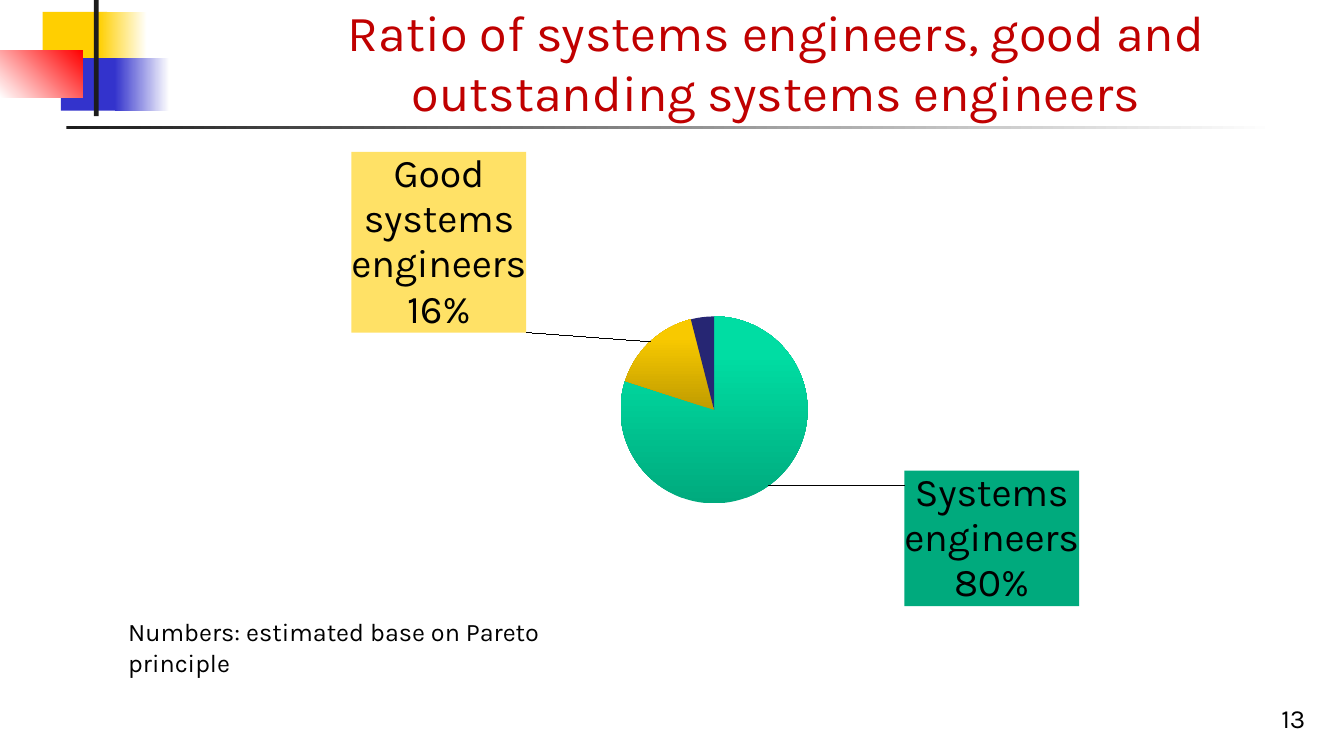
from copy import deepcopy

from pptx import Presentation
from pptx.chart.data import CategoryChartData
from pptx.dml.color import RGBColor
from pptx.enum.chart import XL_CHART_TYPE
from pptx.enum.shapes import MSO_SHAPE
from pptx.enum.text import MSO_ANCHOR, PP_ALIGN
from pptx.oxml import parse_xml
from pptx.oxml.ns import nsdecls
from pptx.util import Pt

RECTANGLE = MSO_SHAPE.RECTANGLE
PIE = XL_CHART_TYPE.PIE
TOP, BOTTOM = MSO_ANCHOR.TOP, MSO_ANCHOR.BOTTOM
LEFT, CENTER, RIGHT = PP_ALIGN.LEFT, PP_ALIGN.CENTER, PP_ALIGN.RIGHT

THEME = {
    "font": "Karla",
    "title": "C00000", "text": "000000", "white": "FFFFFF",
    "yellow": "FFCF01", "blue": "3333CC", "red": "FF0000", "ink": "1C1C1C",
    "outstanding": "262673", "green_label": "00AA7D", "yellow_label": "FFE166",
    "green_shades": [(0, "00AA7D"), (80, "00DDA3"), (100, "00DEA4")],
    "yellow_shades": [(0, "BF9B00"), (80, "F8C900"), (100, "F9CA00")],
    "title_size": 36, "label_size": 28, "note_size": 18, "number_size": 18.7,
}


def paint(fill, stops, angle=0):
    """Fill with one colour, or with a gradient through (percent, colour) stops."""
    if isinstance(stops, str):
        fill.solid()
        fill.fore_color.rgb = RGBColor.from_string(stops)
        return
    fill.gradient()
    fill.gradient_angle = angle
    first = fill.gradient_stops[0]._gs
    for _ in stops[2:]:
        first.addnext(deepcopy(first))
    for stop, (percent, color) in zip(fill.gradient_stops, stops):
        stop.position = percent / 100
        stop.color.rgb = RGBColor.from_string(color)


def set_font(font, size, color):
    values = {"name": THEME["font"], "size": Pt(size)}
    for key, value in values.items():
        setattr(font, key, value)
    font.color.rgb = RGBColor.from_string(color)


deck = Presentation()
deck.slide_width, deck.slide_height = Pt(960), Pt(540)
slide = deck.slides.add_slide(deck.slide_layouts[6])

# Corner ornament and rule under the title
yellow, blue, red, ink, white = (
    THEME[name] for name in ("yellow", "blue", "red", "ink", "white"))
ornament = [
    (30.5, 8.5, 46, 37.5, yellow, 0),
    (70.5, 8.5, 34.5, 37.5, [(0, yellow), (100, white)], 0),
    (43.5, 41.5, 44.5, 37.5, blue, 0),
    (82, 41.5, 39, 37.5, [(0, blue), (100, white)], 0),
    (0, 36, 59, 33.5, [(0, white), (100, red)], 45),
    (67, 0, 3.5, 83, ink, 0),
    (47.5, 90, 864, 2.25, [(0, ink), (100, white)], 0),
]
for left, top, width, height, color, angle in ornament:
    block = slide.shapes.add_shape(
        RECTANGLE, Pt(left), Pt(top), Pt(width), Pt(height))
    block.shadow.inherit = False
    block.line.fill.background()
    paint(block.fill, color, angle)

# Pie chart of the three groups
ratio = CategoryChartData()
ratio.categories = ["Systems engineers", "Good systems engineers",
                    "Outstanding systems engineers"]
ratio.add_series("Series 1", (80, 16, 4))
chart = slide.shapes.add_chart(
    PIE, Pt(73.5), Pt(103), Pt(856), Pt(351.5), ratio).chart
chart.has_legend = False
chart.has_title = False
set_font(chart.font, THEME["label_size"], THEME["text"])
pie = chart.plots[0]
pie.vary_by_categories = True
engineers = pie.series[0]
slices = [THEME["green_shades"], THEME["yellow_shades"], THEME["outstanding"]]
for index, shades in enumerate(slices):
    slice_format = engineers.points[index].format
    paint(slice_format.fill, shades, 90)
    slice_format.line.fill.background()

# Place of the pie inside the chart
plot_area = chart._chartSpace.chart.plotArea
for layout in plot_area.findall("{*}layout"):
    plot_area.remove(layout)
plot_area.insert(0, parse_xml(
    f'<c:layout {nsdecls("c")}><c:manualLayout><c:layoutTarget val="inner"/>'
    '<c:xMode val="edge"/><c:yMode val="edge"/><c:x val="0.43"/><c:y val="0.35"/>'
    '<c:w val="0.16"/><c:h val="0.38"/></c:manualLayout></c:layout>'))

# Slice labels: two moved away from the pie, the smallest slice has none
labels = engineers.data_labels
labels.show_value = False
labels.show_category_name = True
labels.show_percentage = True
set_font(labels.font, THEME["label_size"], THEME["text"])
moved_labels = [(0.11, -0.04, THEME["green_label"]),
                (-0.1, -0.01, THEME["yellow_label"])]
for index, (shift_x, shift_y, color) in enumerate(moved_labels):
    labels._element.insert(index, parse_xml(
        f'<c:dLbl {nsdecls("c", "a")}><c:idx val="{index}"/><c:layout><c:manualLayout>'
        f'<c:x val="{shift_x}"/><c:y val="{shift_y}"/></c:manualLayout></c:layout>'
        f'<c:spPr><a:solidFill><a:srgbClr val="{color}"/></a:solidFill></c:spPr>'
        '<c:dLblPos val="outEnd"/><c:showLegendKey val="0"/><c:showVal val="0"/>'
        '<c:showCatName val="1"/><c:showSerName val="0"/><c:showPercent val="1"/>'
        '<c:showBubbleSize val="0"/><c:separator>\n</c:separator></c:dLbl>'))
    set_font(engineers.points[index].data_label.font,
             THEME["label_size"], THEME["text"])
labels._element.insert(len(moved_labels), parse_xml(
    f'<c:dLbl {nsdecls("c")}><c:idx val="2"/><c:delete val="1"/></c:dLbl>'))

# Title, slide number and note
texts = [
    ("Ratio of systems engineers, good and outstanding systems engineers",
     (149, 24.5, 811, 66), BOTTOM, CENTER, THEME["title_size"], THEME["title"]),
    ("13", (739.5, 492, 200, 36), BOTTOM, RIGHT,
     THEME["number_size"], THEME["text"]),
    ("Numbers: estimated base on Pareto principle",
     (84.5, 437, 375, 29), TOP, LEFT, THEME["note_size"], THEME["text"]),
]
for wording, place, anchor, alignment, size, color in texts:
    frame = slide.shapes.add_textbox(*(Pt(length) for length in place)).text_frame
    frame.word_wrap = True
    frame.vertical_anchor = anchor
    paragraph = frame.paragraphs[0]
    paragraph.alignment = alignment
    run = paragraph.add_run()
    run.text = wording
    set_font(run.font, size, color)

deck.save("out.pptx")
